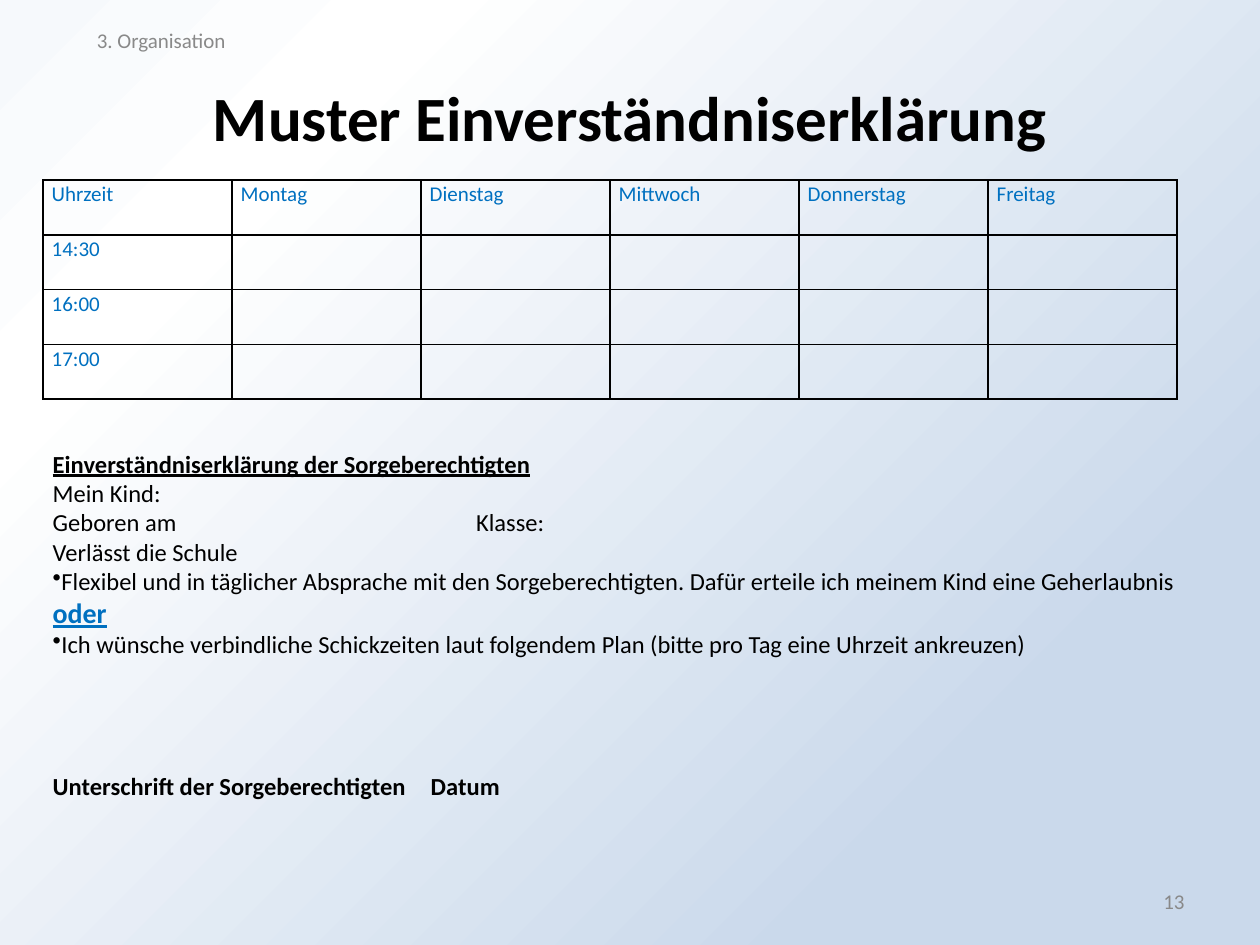
import pptx
import pptx.util
import pptx.oxml
import pptx.oxml.ns
import pptx.dml.color
import pptx.enum.text
import lxml.etree

Inches = pptx.util.Inches
Pt = pptx.util.Pt
RGB = pptx.dml.color.RGBColor
ALIGN = pptx.enum.text.PP_ALIGN
qn = pptx.oxml.ns.qn

BLACK = RGB(0x00, 0x00, 0x00)
BLUE = RGB(0x00, 0x70, 0xC0)
GREY = RGB(0x89, 0x89, 0x89)
LIGHT = RGB(0xF6, 0xF9, 0xFC)
WHITE = RGB(0xFF, 0xFF, 0xFF)
PALE = RGB(0xCA, 0xD9, 0xEB)

FONT = "Calibri"
STOPS = [(0, LIGHT), (20, WHITE), (79, PALE)]
DAYS = ["Uhrzeit", "Montag", "Dienstag", "Mittwoch", "Donnerstag", "Freitag"]
TIMES = ["14:30", "16:00", "17:00"]


def paint_back(slide):
    stops = "".join(
        f'<a:gs pos="{pos * 1000}"><a:srgbClr val="{color}"/></a:gs>'
        for pos, color in STOPS
    )
    back = pptx.oxml.parse_xml(
        f'<p:bg {pptx.oxml.ns.nsdecls("p", "a")}><p:bgPr>'
        f'<a:gradFill rotWithShape="1"><a:gsLst>{stops}</a:gsLst>'
        '<a:lin ang="2700000" scaled="0"/></a:gradFill>'
        "<a:effectLst/></p:bgPr></p:bg>"
    )
    slide.element.cSld.insert(0, back)


def add_run(para, text, size, color=BLACK, bold=False, line=False):
    run = para.add_run()
    run.text = text
    font = run.font
    font.name, font.size, font.bold = FONT, Pt(size), bold
    font.underline = line
    font.color.rgb = color


def add_box(slide, left, top, width, height):
    box = slide.shapes.add_textbox(
        Inches(left), Inches(top), Inches(width), Inches(height)
    )
    frame = box.text_frame
    frame.word_wrap = True
    frame.vertical_anchor = pptx.enum.text.MSO_ANCHOR.MIDDLE
    return frame


def add_label(slide, area, text, size, color, align, bold=False):
    para = add_box(slide, *area).paragraphs[0]
    para.alignment = align
    add_run(para, text, size, color, bold)


def set_bullet(para):
    props = para._p.get_or_add_pPr()
    props.set("marL", "0")
    props.set("indent", "0")
    lxml.etree.SubElement(props, qn("a:buChar"), char="•")


def set_tab(para, pos):
    tabs = lxml.etree.SubElement(para._p.get_or_add_pPr(), qn("a:tabLst"))
    lxml.etree.SubElement(tabs, qn("a:tab"), pos=str(Inches(pos)), algn="l")


def set_edges(cell):
    props = cell._tc.get_or_add_tcPr()
    for index, side in enumerate("LRTB"):
        edge = pptx.oxml.parse_xml(
            f'<a:ln{side} {pptx.oxml.ns.nsdecls("a")} w="{Pt(1)}"><a:solidFill>'
            f'<a:srgbClr val="{BLACK}"/></a:solidFill></a:ln{side}>'
        )
        props.insert(index, edge)


def fill_cell(cell, text):
    cell.fill.background()
    set_edges(cell)
    cell.margin_left = cell.margin_right = Inches(0.07)
    cell.margin_top = cell.margin_bottom = 0
    para = cell.text_frame.paragraphs[0]
    para.line_spacing = 1.07
    para.font.size = Pt(12)
    if text:
        add_run(para, text, 12, BLUE)


def add_plan(slide):
    rows = [DAYS] + [[time] + [""] * (len(DAYS) - 1) for time in TIMES]
    table = slide.shapes.add_table(
        len(rows), len(DAYS), Inches(0.34), Inches(1.43), Inches(9), Inches(1.74)
    ).table
    table.first_row = table.horz_banding = False
    for row, texts in enumerate(rows):
        for col, text in enumerate(texts):
            fill_cell(table.cell(row, col), text)


def add_form(slide):
    frame = add_box(slide, 0.32, 3.49, 9.42, 2.93)

    def add_line(text, size=14, color=BLACK, bold=False, line=False):
        first = frame.paragraphs[0]
        para = frame.add_paragraph() if first.runs else first
        add_run(para, text, size, color, bold, line)
        return para

    add_line("Einverständniserklärung der Sorgeberechtigten", bold=True, line=True)
    add_line("Mein Kind:")
    set_tab(add_line("Geboren am\tKlasse:"), 3.36)
    add_line("Verlässt die Schule")
    set_bullet(add_line(
        "Flexibel und in täglicher Absprache mit den Sorgeberechtigten. "
        "Dafür erteile ich meinem Kind eine Geherlaubnis"
    ))
    add_line("oder", 16, BLUE, True, True)
    set_bullet(add_line(
        "Ich wünsche verbindliche Schickzeiten laut folgendem Plan "
        "(bitte pro Tag eine Uhrzeit ankreuzen)"
    ))
    sign = add_line("Unterschrift der Sorgeberechtigten\tDatum", bold=True)
    sign.space_before = Pt(64)
    set_tab(sign, 3)


def main():
    deck = pptx.Presentation()
    deck.slide_width, deck.slide_height = Inches(10), Inches(7.5)
    slide = deck.slides.add_slide(deck.slide_layouts[6])
    paint_back(slide)
    add_label(slide, (0.5, 0.3, 9, 1.25), "Muster Einverständniserklärung",
              36, BLACK, ALIGN.CENTER, True)
    add_label(slide, (7.17, 6.95, 2.33, 0.4), "13", 12, GREY, ALIGN.RIGHT)
    add_label(slide, (0.67, 0.12, 3.17, 0.4), "3. Organisation",
              12, GREY, ALIGN.LEFT)
    add_plan(slide)
    add_form(slide)
    deck.save("out.pptx")


if __name__ == "__main__":
    main()
